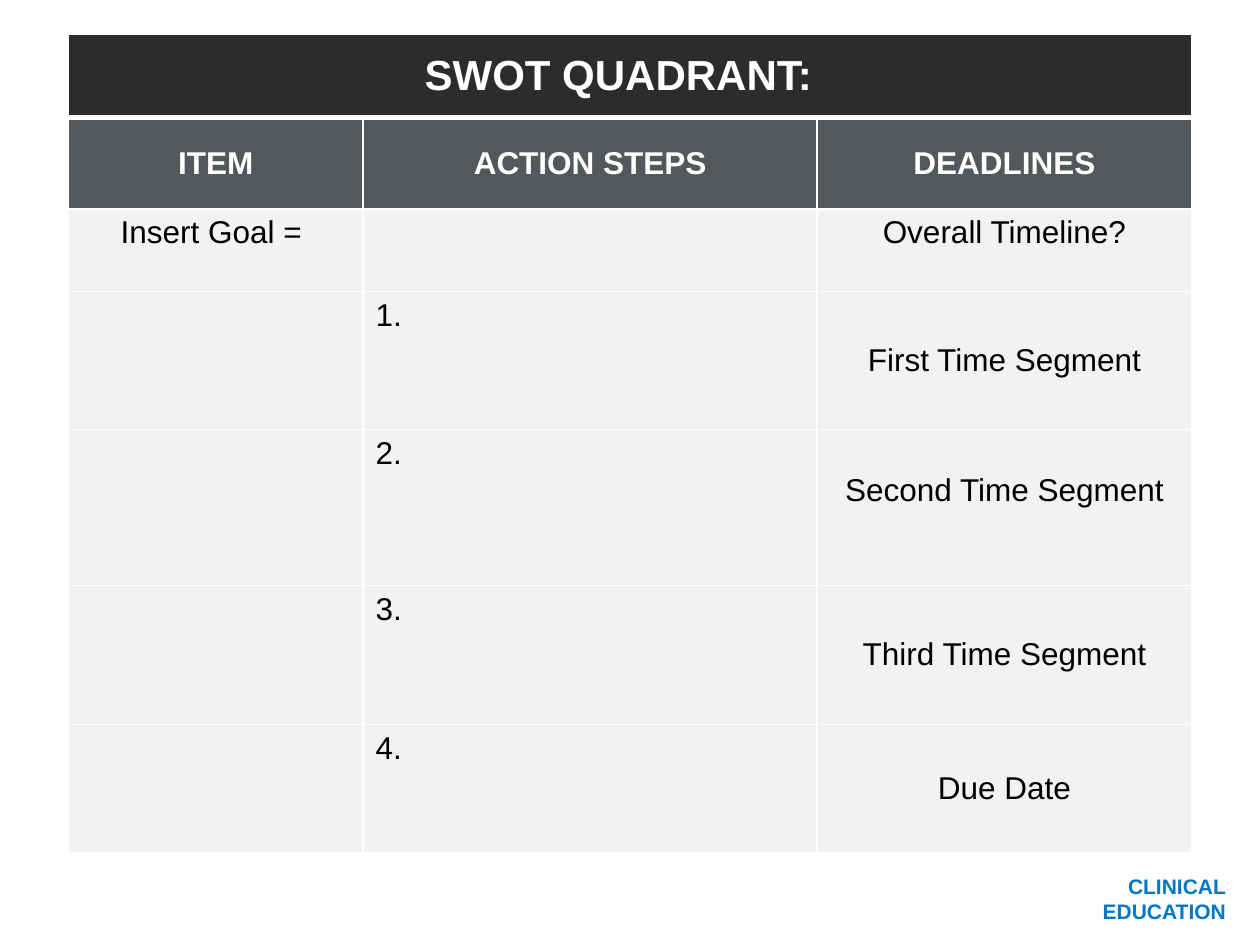
from dataclasses import dataclass

from lxml import etree
from pptx import Presentation
from pptx.dml.color import RGBColor
from pptx.enum.text import MSO_ANCHOR as Anchor, PP_ALIGN as Align
from pptx.oxml.ns import qn
from pptx.util import Pt

WHITE = RGBColor(0xFF, 0xFF, 0xFF)
BLACK = RGBColor(0x00, 0x00, 0x00)
CHARCOAL = RGBColor(0x2A, 0x2C, 0x2E)
SLATE = RGBColor(0x53, 0x58, 0x5B)
PALE = RGBColor(0xF2, 0xF2, 0xF2)
BLUE = RGBColor(0x00, 0x77, 0xC8)

COLUMN_WIDTHS = (168.5, 259.5, 214)
THIN, THICK = 1, 3
SIDE_MARGIN, END_MARGIN = 7.2, 3.6


@dataclass(frozen=True)
class RowStyle:
    fill: RGBColor
    color: RGBColor
    size: float
    bold: bool
    anchors: tuple
    aligns: tuple = (Align.CENTER,) * 3


@dataclass(frozen=True)
class PlanRow:
    height: float
    texts: tuple
    style: RowStyle
    extra_right: float = 0
    extra_bottom: float = 0


TITLE = RowStyle(CHARCOAL, WHITE, 24, True, (Anchor.MIDDLE,) * 3)
HEADING = RowStyle(SLATE, WHITE, 18, True, (Anchor.MIDDLE,) * 3)
GOAL = RowStyle(PALE, BLACK, 18, False, (Anchor.TOP,) * 3)
STEP = RowStyle(PALE, BLACK, 18, False,
                (Anchor.TOP, Anchor.TOP, Anchor.MIDDLE),
                (Align.CENTER, Align.LEFT, Align.CENTER))

PLAN = (
    PlanRow(47.5, ("SWOT QUADRANT:", "", ""), TITLE, extra_right=13.3),
    PlanRow(52.3, ("ITEM", "ACTION STEPS", "DEADLINES"), HEADING),
    PlanRow(47, ("Insert Goal = ", "", "Overall Timeline?"), GOAL),
    PlanRow(79, ("", "1.", "First Time Segment"), STEP),
    PlanRow(89.2, ("", "2.", "Second Time Segment"), STEP, extra_bottom=20),
    PlanRow(79.3, ("", "3.", "Third Time Segment"), STEP),
    PlanRow(73.3, ("", "4.", "Due Date"), STEP),
)


def format_font(font, size: float, color: RGBColor, bold: bool) -> None:
    font.name = "Arial"
    font.size = Pt(size)
    font.bold = bold
    font.color.rgb = color


def add_borders(cell, top: float, bottom: float) -> None:
    properties = cell._tc.get_or_add_tcPr()
    for side, width in (("L", THIN), ("R", THIN), ("T", top), ("B", bottom)):
        line = etree.SubElement(properties, qn(f"a:ln{side}"), w=str(Pt(width)))
        solid = etree.SubElement(line, qn("a:solidFill"))
        etree.SubElement(solid, qn("a:srgbClr"), val=str(WHITE))


def fill_cell(cell, row: PlanRow, column: int) -> None:
    style = row.style
    add_borders(cell,
                top=THICK if style is HEADING else THIN,
                bottom=THICK if style is TITLE else THIN)
    cell.fill.solid()
    cell.fill.fore_color.rgb = style.fill
    cell.vertical_anchor = style.anchors[column]
    cell.margin_right = Pt(SIDE_MARGIN + row.extra_right)
    cell.margin_bottom = Pt(END_MARGIN + row.extra_bottom)
    paragraph = cell.text_frame.paragraphs[0]
    paragraph.text = row.texts[column]
    paragraph.alignment = style.aligns[column]
    format_font(paragraph.font, style.size, style.color, style.bold)
    for run in paragraph.runs:
        format_font(run.font, style.size, style.color, style.bold)


def add_plan_table(slide) -> None:
    height = sum(row.height for row in PLAN)
    plan = slide.shapes.add_table(
        len(PLAN), len(COLUMN_WIDTHS),
        Pt(39), Pt(19.7), Pt(sum(COLUMN_WIDTHS)), Pt(height)).table
    plan.first_row = plan.horz_banding = False
    for column, width in zip(plan.columns, COLUMN_WIDTHS):
        column.width = Pt(width)
    for index, row in enumerate(PLAN):
        plan.rows[index].height = Pt(row.height)
        for column in range(len(COLUMN_WIDTHS)):
            fill_cell(plan.cell(index, column), row, column)
    plan.cell(0, 0).merge(plan.cell(0, len(COLUMN_WIDTHS) - 1))


def add_department(slide) -> None:
    department = slide.shapes.add_textbox(
        Pt(368.6), Pt(498.5), Pt(332), Pt(29.5)).text_frame
    department.word_wrap = True
    department.vertical_anchor = Anchor.MIDDLE
    department.margin_left = department.margin_right = 0
    department.margin_top = department.margin_bottom = 0
    department.text = "CLINICAL\nEDUCATION"
    for paragraph in department.paragraphs:
        paragraph.alignment = Align.RIGHT
        format_font(paragraph.runs[0].font, 12, BLUE, True)


def main() -> None:
    presentation = Presentation()
    presentation.slide_width, presentation.slide_height = Pt(720), Pt(540)
    slide = presentation.slides.add_slide(presentation.slide_layouts[6])
    # Department name in the bottom corner
    add_department(slide)
    # Action plan
    add_plan_table(slide)
    presentation.save("out.pptx")


if __name__ == "__main__":
    main()
